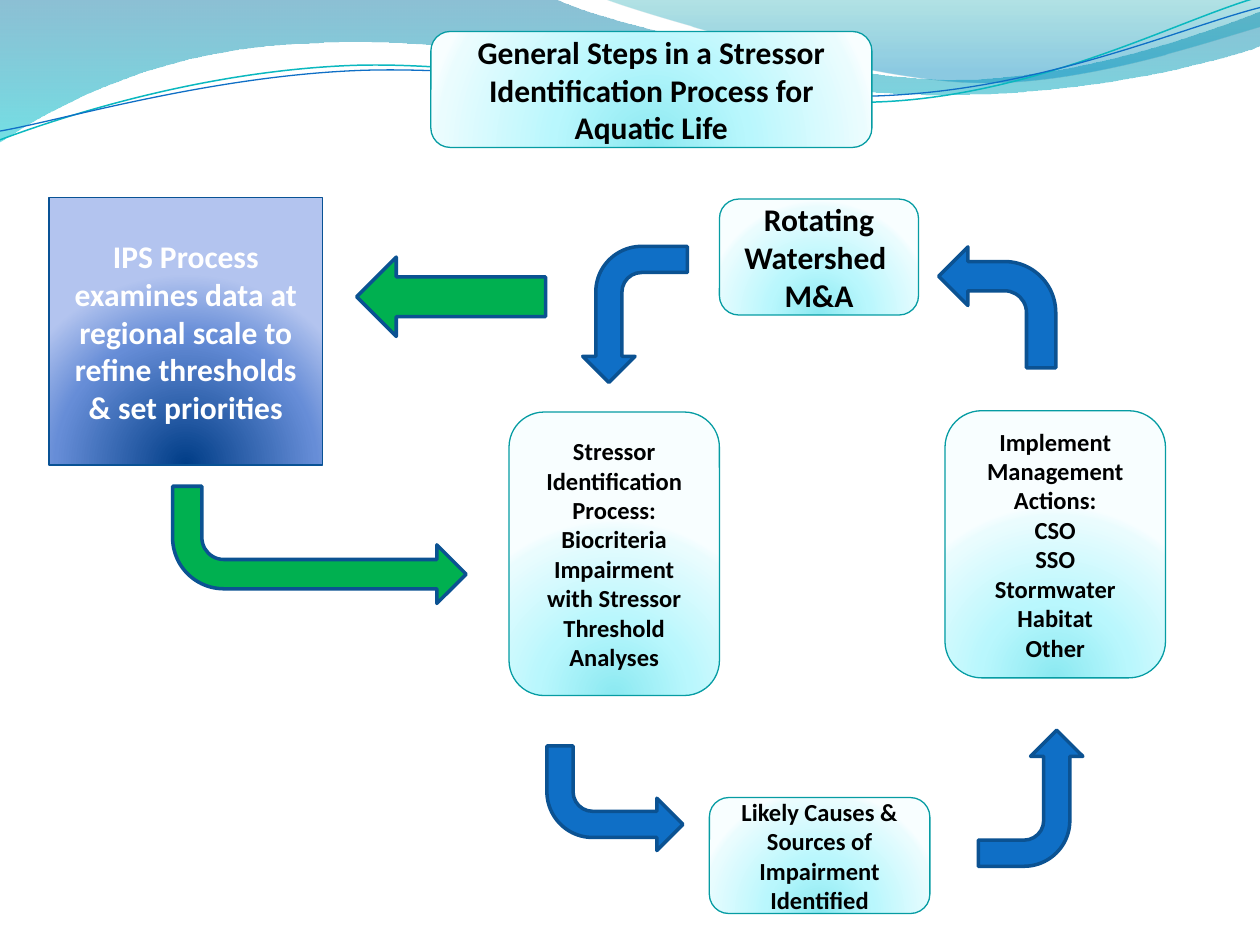
from dataclasses import dataclass
from math import cos, radians, sin

from lxml.etree import SubElement as Sub
from pptx import Presentation
from pptx.dml.color import RGBColor as RGB
from pptx.enum.shapes import MSO_SHAPE as Kind
from pptx.enum.text import MSO_ANCHOR as Anchor, PP_ALIGN as Align
from pptx.oxml.ns import qn
from pptx.util import Inches, Pt


@dataclass(frozen=True)
class Theme:
    font: str = "Calibri"
    big: int = 18
    small: int = 14
    black: str = "000000"
    white: str = "FFFFFF"
    blue: str = "0F6FC6"
    green: str = "00B050"
    edge: str = "0B5292"
    teal: str = "069CA3"
    aqua: tuple = ((0, "8BE9F1", 100), (43, "B9F7FD", 100),
                   (93, "EAFCFE", 100), (100, "F8FEFF", 100))
    navy: tuple = ((0, "003D87", 100), (68, "668DD7", 100), (100, "B3C4EF", 100))
    wave: tuple = ((0, "0074A1", 45), (100, "00C6CF", 55))
    crest: tuple = ((0, "00A1A9", 30), (80, "008BBF", 45))


theme = Theme()
deck = Presentation()
deck.slide_width, deck.slide_height = Inches(10), Inches(7.5)
slide = deck.slides.add_slide(deck.slide_layouts[6])
shapes = slide.shapes


def blend(shape, stops, glow):
    shape.fill.background()
    props = shape._element.spPr
    grad = props.makeelement(qn("a:gradFill"), rotWithShape="1")
    props.replace(props.find(qn("a:noFill")), grad)
    marks = Sub(grad, qn("a:gsLst"))
    for spot, tint, alpha in stops:
        mark = Sub(marks, qn("a:gs"), pos=str(spot * 1000))
        color = Sub(mark, qn("a:srgbClr"), val=tint)
        if alpha < 100:
            Sub(color, qn("a:alpha"), val=str(alpha * 1000))
    if glow:
        ring = Sub(grad, qn("a:path"), path="circle")
        Sub(ring, qn("a:fillToRect"), l="50000", t="130000", r="50000", b="-30000")
    else:
        Sub(grad, qn("a:lin"), ang="5400000", scaled="1")


def write(text, *, box, size, kind=Kind.ROUNDED_RECTANGLE, tint=theme.black,
          stops=theme.aqua, line=theme.teal):
    shape = shapes.add_shape(kind, *map(Inches, box))
    blend(shape, stops, True)
    shape.line.color.rgb = RGB.from_string(line)
    shape.line.width = Pt(0.75)
    shape.shadow.inherit = False
    frame = shape.text_frame
    frame.word_wrap = True
    frame.vertical_anchor = Anchor.MIDDLE
    frame.text = text
    for para in frame.paragraphs:
        para.alignment = Align.CENTER
        for run in para.runs:
            font = run.font
            font.name, font.size, font.bold = theme.font, Pt(size), True
            font.color.rgb = RGB.from_string(tint)


waves = [
    ((0, 0), [(4.4, -0.01), (4.76, 0.17, 6.64, 0.63, 7.58, 0.63),
              (8.53, 0.63, 9.58, 0.26, 10, 0.09), (10.01, 0.36),
              (9.83, 0.44, 8.7, 0.76, 7.46, 0.75),
              (6.22, 0.75, 3.82, 0.28, 2.57, 0.34),
              (1.29, 0.36, 0.46, 0.83, -0.01, 1.13), (0, 0)],
     theme.wave, None, 0, 0),
    ((4.79, -0.01), [(5.09, 0.11, 6.82, 0.62, 7.69, 0.65),
                     (8.56, 0.69, 9.61, 0.32, 10, 0.21), (10, 0), (4.79, -0.01)],
     theme.crest, None, 0, 0),
    ((0, 1.11), [(0.48, 0.93, 1.58, 0.57, 2.77, 0.52),
                 (3.95, 0.47, 5.93, 0.89, 7.13, 0.8),
                 (8.33, 0.71, 9.38, 0.15, 9.98, -0.02)],
     None, "0AB8BF", 0.85, -2.7),
    ((0, 1.04), [(0.47, 0.96, 1.64, 0.61, 2.83, 0.56),
                 (4.03, 0.51, 5.97, 0.84, 7.17, 0.75),
                 (8.36, 0.67, 9.41, 0.21, 10, 0.06)],
     None, theme.blue, 0.75, -2.7),
]
mid, high = 4.99, 0.58
for start, parts, stops, tint, width, turn in waves:
    dots = [start] + [pair for part in parts for pair in zip(part[::2], part[1::2])]
    c, s = cos(radians(turn)), sin(radians(turn))
    path = [(Inches(mid + (x - mid) * c + (y - high) * s),
             Inches(high - (x - mid) * s + (y - high) * c)) for x, y in dots]
    pen = shapes.build_freeform(*path[0])
    pen.add_line_segments(path[1:], close=bool(stops))
    shape = pen.convert_to_shape()
    lines = iter(list(shape._element.iter(qn("a:lnTo"))))
    for part in parts:
        first = next(lines)
        if len(part) == 6:
            first.tag_name = None
            curve = first.makeelement(qn("a:cubicBezTo"))
            first.addprevious(curve)
            for node in (first, next(lines), next(lines)):
                curve.append(node[0])
                node.getparent().remove(node)
    shape.rotation = turn
    shape.shadow.inherit = False
    if stops:
        blend(shape, stops, False)
        shape.line.fill.background()
    else:
        shape.fill.background()
        shape.line.color.rgb = RGB.from_string(tint)
        shape.line.width = Pt(width)

write("General Steps in a Stressor Identification Process for Aquatic Life",
      box=(3.42, 0.25, 3.5, 0.92), size=theme.big)
write("Likely Causes & Sources of Impairment Identified",
      box=(5.63, 6.33, 1.75, 0.92), size=theme.small)
write("Implement Management Actions:\nCSO\nSSO\nStormwater\nHabitat\nOther",
      box=(7.5, 3.26, 1.75, 2.12), size=theme.small)
write("Rotating\nWatershed  M&A", box=(5.71, 1.58, 1.58, 0.92), size=theme.big)
write("Stressor Identification Process:\n"
      "Biocriteria Impairment with Stressor Threshold Analyses",
      box=(4.04, 3.27, 1.67, 2.25), size=theme.small)

arrows = [
    (Kind.BENT_ARROW, (4.5, 2.08, 1.08, 0.83), 270, "flipH", theme.blue),
    (Kind.BENT_ARROW, (4.34, 5.92, 1.08, 0.83), 180, "flipH", theme.blue),
    (Kind.BENT_ARROW, (7.64, 5.92, 1.08, 0.83), 90, "flipH", theme.blue),
    (Kind.BENT_ARROW, (7.45, 1.96, 0.93, 0.96), 0, "flipH", theme.blue),
    (Kind.RIGHT_ARROW, (2.83, 2.04, 1.5, 0.63), 180, None, theme.green),
    (Kind.BENT_ARROW, (1.37, 3.86, 2.33, 0.93), 0, "flipV", theme.green),
]
for kind, box, turn, flip, tint in arrows:
    arrow = shapes.add_shape(kind, *map(Inches, box))
    arrow.rotation = turn
    if flip:
        arrow._element.spPr.xfrm.set(flip, "1")
    arrow.shadow.inherit = False
    arrow.fill.solid()
    arrow.fill.fore_color.rgb = RGB.from_string(tint)
    arrow.line.color.rgb = RGB.from_string(theme.edge)
    arrow.line.width = Pt(2)

write("IPS Process\nexamines data at regional scale to refine thresholds & set priorities",
      box=(0.39, 1.57, 2.17, 2.12), size=theme.big, kind=Kind.RECTANGLE,
      tint=theme.white, stops=theme.navy, line="095295")

deck.save("out.pptx")
